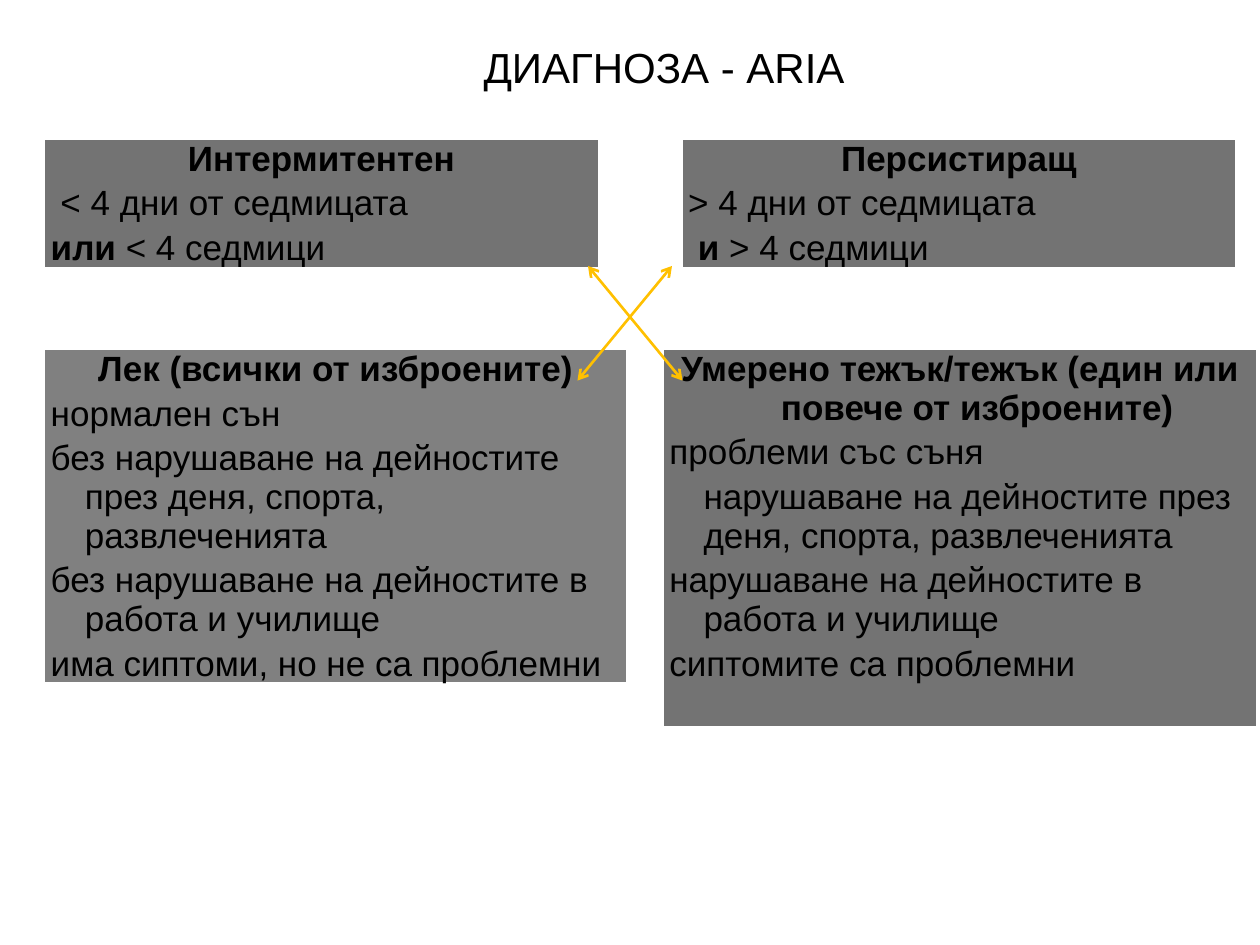
from lxml.etree import SubElement
from pptx import Presentation
from pptx.dml.color import RGBColor
from pptx.enum.shapes import MSO_CONNECTOR as Connector, MSO_SHAPE as Shape
from pptx.enum.text import MSO_ANCHOR as Anchor, PP_ALIGN as Align
from pptx.oxml.ns import qn
from pptx.util import Pt

BLACK = RGBColor(0x00, 0x00, 0x00)
WHITE = RGBColor(0xFF, 0xFF, 0xFF)
DARK_GRAY = RGBColor(0x73, 0x73, 0x73)
LIGHT_GRAY = RGBColor(0x80, 0x80, 0x80)
GOLD = RGBColor(0xFF, 0xC0, 0x00)
FONT = "Arial"

DURATION_TOP, DURATION_HEIGHT = 77.75, 77
SEVERITY_TOP = 198
LEFT_EDGE = 23.75

INTERMITTENT = [
    [("Интермитентен", True)],
    [(" < 4 дни от седмицата", False)],
    [("или", True), (" < 4 седмици", False)],
]
PERSISTENT = [
    [("Персистиращ", True)],
    [("> 4 дни от седмицата", False)],
    [(" ", False), ("и ", True), ("> 4 седмици", False)],
]
MILD = [
    [("Лек (всички от изброените)", True)],
    [("нормален сън", False)],
    [("без нарушаване на дейностите през деня, спорта, развлеченията", False)],
    [("без нарушаване на дейностите в работа и училище", False)],
    [("има сиптоми, но не са проблемни", False)],
]
SEVERE = [
    [("Умерено тежък/тежък (един или повече от изброените)", True)],
    [("проблеми със съня", False)],
    [("\tнарушаване на дейностите през деня, спорта, развлеченията", False)],
    [("нарушаване на дейностите в работа и училище", False)],
    [("сиптомите са проблемни", False)],
]


def format_font(font, size, bold=False):
    font.name = FONT
    font.size = Pt(size)
    font.bold = bold
    font.color.rgb = BLACK


def add_title(slide, left, top, width, height):
    title = slide.shapes.add_textbox(Pt(left), Pt(top), Pt(width), Pt(height))
    text_frame = title.text_frame
    text_frame.word_wrap = True
    text_frame.text = "ДИАГНОЗА - ARIA"
    paragraph = text_frame.paragraphs[0]
    paragraph.alignment = Align.CENTER
    format_font(paragraph.runs[0].font, 24)


def add_criteria(slide, left, top, width, height, fill, lines, hanging=0):
    box = slide.shapes.add_shape(
        Shape.RECTANGLE, Pt(left), Pt(top), Pt(width), Pt(height))
    box.shadow.inherit = False
    box.fill.solid()
    box.fill.fore_color.rgb = fill
    box.line.color.rgb = WHITE
    box.line.width = Pt(4)
    text_frame = box.text_frame
    text_frame.word_wrap = True
    text_frame.vertical_anchor = Anchor.TOP
    text_frame.margin_left = text_frame.margin_right = Pt(5.25)
    text_frame.margin_top = text_frame.margin_bottom = Pt(2.5)
    for index, parts in enumerate(lines):
        paragraph = text_frame.add_paragraph() if index else text_frame.paragraphs[0]
        paragraph.alignment = Align.LEFT if index else Align.CENTER
        paragraph.line_spacing = 0.92
        if index:
            paragraph.space_before = Pt(3.4)
        if hanging:
            properties = paragraph._p.get_or_add_pPr()
            properties.set("marL", str(Pt(hanging)))
            properties.set("indent", str(-Pt(hanging)))
        for text, bold in parts:
            run = paragraph.add_run()
            run.text = text
            format_font(run.font, 20, bold)


def add_double_arrow(slide, start_x, start_y, end_x, end_y):
    arrow = slide.shapes.add_connector(
        Connector.STRAIGHT, Pt(start_x), Pt(start_y), Pt(end_x), Pt(end_y))
    arrow.line.color.rgb = GOLD
    arrow.line.width = Pt(1.5)
    line = arrow.line._get_or_add_ln()
    for end in ("a:headEnd", "a:tailEnd"):
        SubElement(line, qn(end), type="arrow")
    SubElement(arrow._element.spPr, qn("a:effectLst"))


def add_crossing_arrows(slide, left, top, width, height, shift):
    bottom = top + height
    add_double_arrow(slide, left + shift, top, left + shift + width, bottom)
    add_double_arrow(slide, left, bottom, left + width, top)


def main():
    presentation = Presentation()
    presentation.slide_width = Pt(720)
    presentation.slide_height = Pt(540)
    slide = presentation.slides.add_slide(presentation.slide_layouts[6])

    add_criteria(slide, 377.25, SEVERITY_TOP, 342.75, 219, DARK_GRAY, SEVERE, 19.5)
    add_criteria(slide, LEFT_EDGE, SEVERITY_TOP, 336, 193.75, LIGHT_GRAY, MILD, 19.5)
    for left, lines in ((LEFT_EDGE, INTERMITTENT), (388, PERSISTENT)):
        add_criteria(slide, left, DURATION_TOP, 320, DURATION_HEIGHT, DARK_GRAY, lines)
    add_crossing_arrows(slide, 330, 152, 54, 65.5, 6)
    add_title(slide, 133, 20, 493, 36)

    presentation.save("out.pptx")


if __name__ == "__main__":
    main()
